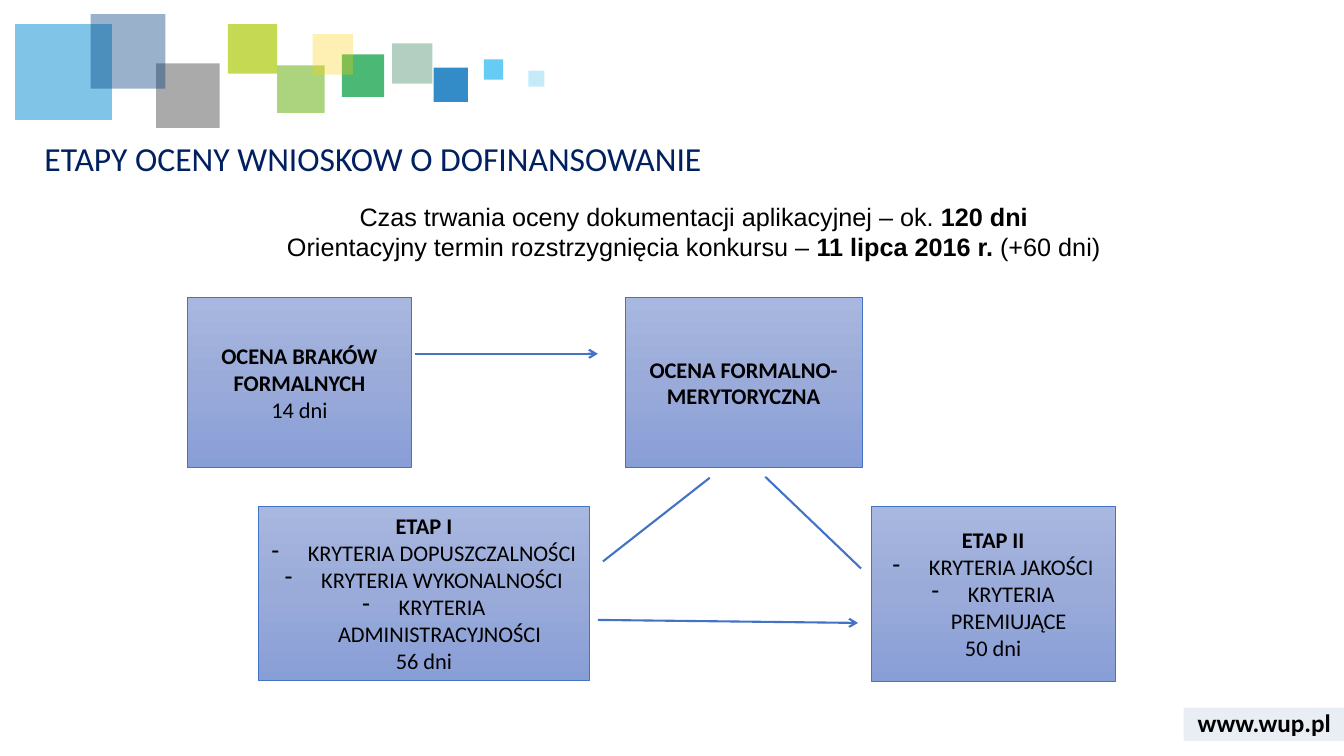
from copy import deepcopy

from pptx import Presentation
from pptx.dml.color import RGBColor as RGB
from pptx.enum.shapes import MSO_CONNECTOR as CONN, MSO_SHAPE as SHAPE
from pptx.enum.text import MSO_ANCHOR as ANCHOR, MSO_AUTO_SIZE as AUTO, PP_ALIGN as ALIGN
from pptx.oxml.ns import qn
from pptx.oxml.xmlchemy import OxmlElement as Element
from pptx.util import Inches, Pt

COLORS = {"text": "000000", "title": "002060", "line": "4472C4", "footer": "2F5597"}
GRADIENT = {0: "A8B7DF", 0.5: "9AABD9", 1: "889ED7"}

SQUARES = [
    (3.89, 0.43, 0.4, 0.4, "006138", 30),
    (4.3, 0.67, 0.34, 0.34, "006EB9", 80),
    (3.39, 0.54, 0.42, 0.42, "009A3C", 70),
    (0.15, 0.24, 0.96, 0.95, "028BD3", 50),
    (2.75, 0.65, 0.47, 0.47, "75B82A", 60),
    (1.55, 0.63, 0.63, 0.64, "575757", 50),
    (0.9, 0.14, 0.74, 0.74, "003D7C", 40),
    (4.8, 0.59, 0.19, 0.2, "40C0F1", 80),
    (2.26, 0.24, 0.49, 0.49, "AFCA0B", 70),
    (3.1, 0.34, 0.4, 0.4, "FED000", 30),
    (5.24, 0.7, 0.16, 0.16, "40C0F1", 30),
    (11.74, 7.02, 1.6, 0.33, COLORS["footer"], 10),
]

STAGES = [
    ((1.86, 2.95, 2.22, 1.69), "OCENA BRAKÓW FORMALNYCH", [], "14 dni"),
    ((6.2, 2.95, 2.35, 1.69), "OCENA FORMALNO-MERYTORYCZNA", [], ""),
    ((8.64, 5.02, 2.42, 1.74), "ETAP II",
     ["KRYTERIA JAKOŚCI", "KRYTERIA PREMIUJĄCE"], "50 dni"),
    ((2.56, 5.02, 3.29, 1.73), "ETAP I",
     ["KRYTERIA DOPUSZCZALNOŚCI", "KRYTERIA WYKONALNOŚCI", "KRYTERIA ADMINISTRACYJNOŚCI"],
     "56 dni"),
]

LINKS = [
    (4.12, 3.51, 5.93, 3.51, True),
    (5.93, 6.15, 8.51, 6.18, True),
    (7.04, 4.74, 5.98, 5.57, False),
    (7.59, 4.73, 8.54, 5.64, False),
]


class Deck:
    body = {"name": "Calibri", "size": Pt(16), "bold": False}
    note = {"name": "Arial", "size": Pt(18), "bold": False}
    heading = {"name": "Calibri", "size": Pt(24), "bold": False}
    footer = {"name": "Calibri", "size": Pt(18), "bold": True}

    def __init__(self):
        self.prs = Presentation()
        self.prs.slide_width, self.prs.slide_height = Inches(13.33), Inches(7.5)
        self.slide = self.prs.slides.add_slide(self.prs.slide_layouts[5])

    def put_text(self, tf, paragraphs, style, color="text", align=ALIGN.CENTER):
        for i, runs in enumerate(paragraphs):
            p = tf.paragraphs[0] if i == 0 else tf.add_paragraph()
            p.alignment = align
            for text, changes in runs:
                r = p.add_run()
                r.text = text
                for key, value in {**style, **changes}.items():
                    setattr(r.font, key, value)
                r.font.color.rgb = RGB.from_string(COLORS[color])

    def title(self, box, text):
        s = self.slide.shapes.title
        s.left, s.top, s.width, s.height = map(Inches, box)
        s.text_frame.vertical_anchor = ANCHOR.TOP
        s.text_frame.auto_size = AUTO.NONE
        self.put_text(s.text_frame, [[(text, {})]], self.heading, "title", ALIGN.LEFT)
        s.text_frame.paragraphs[0].line_spacing = 0.9

    def text(self, box, paragraphs, style, anchor=ANCHOR.TOP, auto=AUTO.NONE):
        tf = self.slide.shapes.add_textbox(*map(Inches, box)).text_frame
        for key, value in {"word_wrap": True, "vertical_anchor": anchor, "auto_size": auto}.items():
            setattr(tf, key, value)
        self.put_text(tf, paragraphs, style)

    def rect(self, box):
        s = self.slide.shapes.add_shape(SHAPE.RECTANGLE, *map(Inches, box))
        s.shadow.inherit = False
        return s

    def square(self, box, color, opacity):
        s = self.rect(box)
        s.fill.solid()
        s.fill.fore_color.rgb = RGB.from_string(color)
        alpha = Element("a:alpha")
        alpha.set("val", str(opacity * 1000))
        s._element.spPr.find(".//" + qn("a:srgbClr")).append(alpha)
        s.line.fill.background()

    def stage(self, box, name, criteria, days):
        s = self.rect(box)
        s.fill.gradient()
        s.fill.gradient_angle = 270
        stops = s._element.spPr.find(".//" + qn("a:gsLst"))
        stops.insert(1, deepcopy(stops[0]))
        for stop, (position, color) in zip(s.fill.gradient_stops, GRADIENT.items()):
            stop.position = position
            stop.color.rgb = RGB.from_string(color)
        s.line.color.rgb = RGB.from_string(COLORS["line"])
        s.line.width = Pt(0.5)
        tf = s.text_frame
        tf.word_wrap, tf.vertical_anchor = True, ANCHOR.MIDDLE
        rows = [[(name, {"bold": True})]] + [[(" " + c, {})] for c in criteria]
        self.put_text(tf, rows + ([[(days, {})]] if days else []), self.body)
        for p in tf.paragraphs[1:len(criteria) + 1]:
            self.bullet(p)

    def bullet(self, p):
        pPr = p._p.get_or_add_pPr()
        pPr.set("marL", str(Inches(0.31)))
        pPr.set("indent", str(-Inches(0.31)))
        dash = Element("a:buChar")
        dash.set("char", "-")
        pPr.extend([Element("a:buFontTx"), dash])

    def link(self, x1, y1, x2, y2, arrow):
        s = self.slide.shapes.add_connector(CONN.STRAIGHT, *map(Inches, (x1, y1, x2, y2)))
        s.line.color.rgb = RGB.from_string(COLORS["line"])
        s.line.width = Pt(1.5)
        if arrow:
            tail = Element("a:tailEnd")
            tail.set("type", "arrow")
            s._element.spPr.find(qn("a:ln")).append(tail)
        s._element.spPr.append(Element("a:effectLst"))


def main():
    deck = Deck()
    for *box, color, opacity in SQUARES:
        deck.square(box, color, opacity)
    deck.text((11.74, 6.97, 1.6, 0.4), [[("www.wup.pl", {})]], deck.footer, ANCHOR.MIDDLE)
    deck.title((0.34, 1.36, 12.41, 0.55), "ETAPY OCENY WNIOSKOW O DOFINANSOWANIE")
    for stage in STAGES:
        deck.stage(*stage)
    bold = {"bold": True}
    deck.text((1.01, 1.95, 11.74, 0.71), [
        [("Czas trwania oceny dokumentacji aplikacyjnej – ok. ", {}), ("120 dni", bold)],
        [("Orientacyjny termin rozstrzygnięcia konkursu – ", {}),
         ("11 lipca 2016 r. ", bold), ("(+60 dni)", {})],
    ], deck.note, auto=AUTO.SHAPE_TO_FIT_TEXT)
    for link in LINKS:
        deck.link(*link)
    deck.prs.save("out.pptx")


if __name__ == "__main__":
    main()
